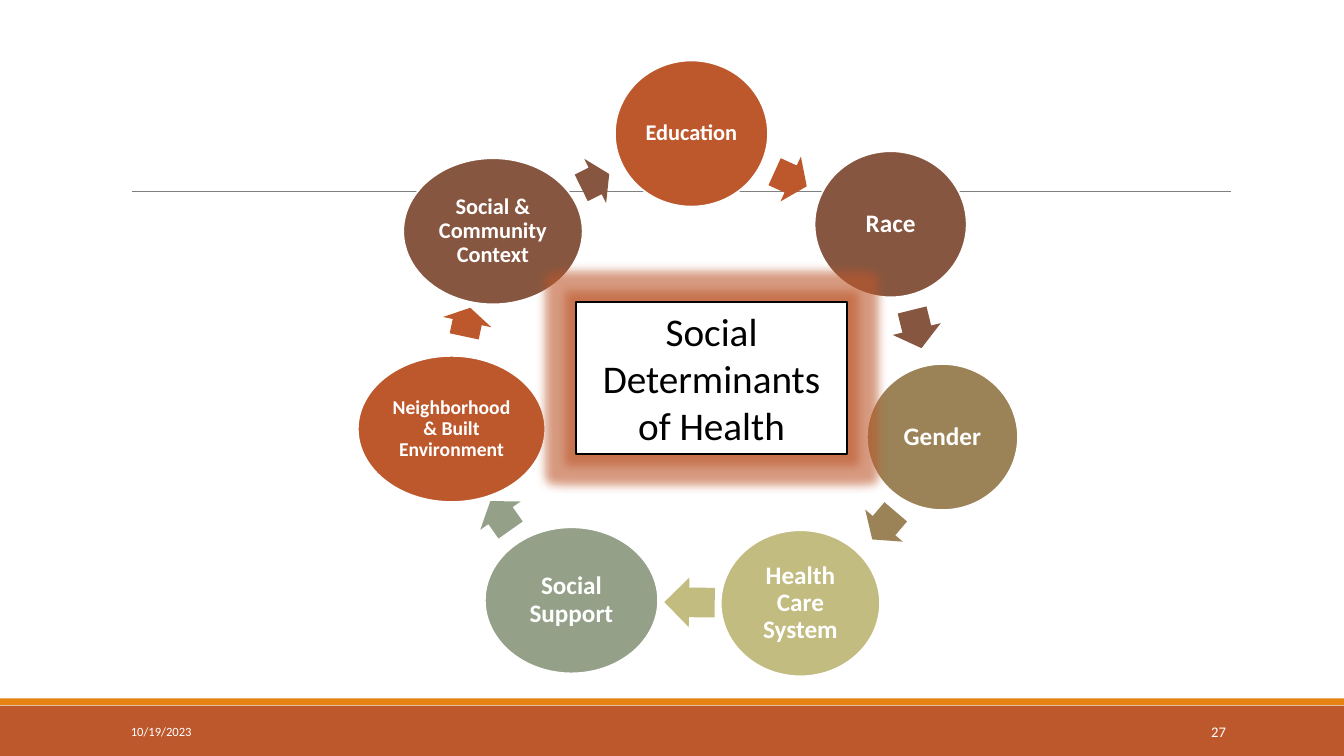
"""Build the social determinants of health cycle slide."""
from lxml import etree
from pptx import Presentation
from pptx.dml.color import RGBColor
from pptx.enum import shapes, text
from pptx.oxml import ns
from pptx.util import Pt

COLORS = {
    "rust": "BD582C", "orange": "E48312", "brown": "865640", "tan": "9B8357",
    "olive": "C2BC80", "sage": "94A088", "white": "FFFFFF", "black": "000000",
    "gray": "808080",
}
CIRCLE_HEIGHT = 104.4
ARROW_HEIGHT = 35.3
CIRCLES = [
    ("Education", "rust", 439.2, 43.2, 109.4, 16),
    ("Race", "brown", 581.8, 108, 108.7, 18),
    ("Gender", "tan", 619.2, 260, 108, 18),
    ("Health Care System", "olive", 514.8, 378.7, 113.8, 18),
    ("Social Support", "sage", 346.3, 376.6, 123.8, 18),
    ("Neighborhood & Built Environment", "rust", 255.6, 254.2, 133.9, 14),
    ("Social & Community Context", "brown", 288, 113, 128.2, 16),
]
ARROWS = [
    ("rust", 552.2, 110.2, 25.2, 24.4),
    ("brown", 640.8, 217.4, 28.1, 76.2),
    ("tan", 618.5, 357.8, 25.9, 130.5),
    ("olive", 474.5, 412.6, 36, 180.7),
    ("sage", 344.9, 350.6, 25.2, 234.9),
    ("rust", 323.3, 212.4, 20.9, 282),
    ("brown", 414, 111.6, 22.3, 333.8),
]


def rgb(name):
    """Return the named color."""
    return RGBColor.from_string(COLORS[name])


def add_shape(page, kind, bounds, fill, line=None):
    """Add a flat filled shape with an optional outline."""
    shape = page.shapes.add_shape(kind, *map(Pt, bounds))
    shape.shadow.inherit = False
    shape.fill.solid()
    shape.fill.fore_color.rgb = rgb(fill)
    if line:
        shape.line.color.rgb = rgb(line)
        shape.line.width = Pt(1.25)
    else:
        shape.line.fill.background()
    return shape


def write(shape, words, size, color, align, bold=False):
    """Write one vertically centered paragraph in a shape."""
    frame = shape.text_frame
    frame.text = words
    frame.word_wrap = True
    frame.vertical_anchor = text.MSO_ANCHOR.MIDDLE
    para = frame.paragraphs[0]
    para.alignment = align
    font = para.runs[0].font
    font.name = "Calibri"
    font.size = Pt(size)
    font.bold = bold
    font.color.rgb = rgb(color)
    return frame


def add_circle(page, words, fill, left, top, width, size):
    """Add one labeled determinant."""
    circle = add_shape(page, shapes.MSO_SHAPE.OVAL,
                       (left, top, width, CIRCLE_HEIGHT), fill, "white")
    frame = write(circle, words, size, "white", text.PP_ALIGN.CENTER, True)
    frame.margin_left = frame.margin_right = Pt(2)
    frame.margin_top = frame.margin_bottom = Pt(2)
    frame.paragraphs[0].line_spacing = 0.9


def add_arrow(page, fill, left, top, width, angle):
    """Add one arrow of the cycle."""
    arrow = add_shape(page, shapes.MSO_SHAPE.RIGHT_ARROW,
                      (left, top, width, ARROW_HEIGHT), fill)
    arrow.adjustments[0] = 0.6
    arrow.adjustments[1] = 0.5
    arrow.rotation = angle


def add_rule(page, left, right, top):
    """Add the thin horizontal rule."""
    rule = page.shapes.add_connector(shapes.MSO_CONNECTOR.STRAIGHT,
                                     Pt(left), Pt(top), Pt(right), Pt(top))
    rule.line.color.rgb = rgb("gray")
    rule.line.width = Pt(0.5)
    etree.SubElement(rule._element.spPr, ns.qn("a:effectLst"))


def add_glow(shape, color, radius, alpha):
    """Surround a shape with a translucent glow."""
    effects = shape._element.spPr.find(ns.qn("a:effectLst"))
    glow = etree.SubElement(effects, ns.qn("a:glow"), rad=str(Pt(radius)))
    tint = etree.SubElement(glow, ns.qn("a:srgbClr"), val=COLORS[color])
    etree.SubElement(tint, ns.qn("a:alpha"), val=str(alpha * 1000))


def add_footer_text(page, words, left, width, size, align):
    """Add a text box in the footer band."""
    box = page.shapes.add_textbox(Pt(left), Pt(508.3), Pt(width), Pt(28.8))
    write(box, words, size, "white", align)


def main():
    """Build and save the deck."""
    deck = Presentation()
    deck.slide_width, deck.slide_height = Pt(960), Pt(540)
    page = deck.slides.add_slide(deck.slide_layouts[6])
    rectangle = shapes.MSO_SHAPE.RECTANGLE

    add_shape(page, rectangle, (0, 504, 960, 36), "rust")
    add_shape(page, rectangle, (0, 498.8, 960, 5), "orange")
    add_rule(page, 94.3, 879, 136.6)
    add_footer_text(page, "10/19/2023", 86.4, 194.4, 9, text.PP_ALIGN.LEFT)
    add_footer_text(page, "27", 779.8, 103, 10.5, text.PP_ALIGN.RIGHT)

    for circle in CIRCLES:
        add_circle(page, *circle)
    for arrow in ARROWS:
        add_arrow(page, *arrow)

    title = add_shape(page, rectangle, (411.4, 215.6, 193.7, 108.7), "white", "black")
    write(title, "Social Determinants of Health", 28, "black", text.PP_ALIGN.CENTER)
    add_glow(title, "rust", 14, 60)

    deck.save("out.pptx")


if __name__ == "__main__":
    main()
